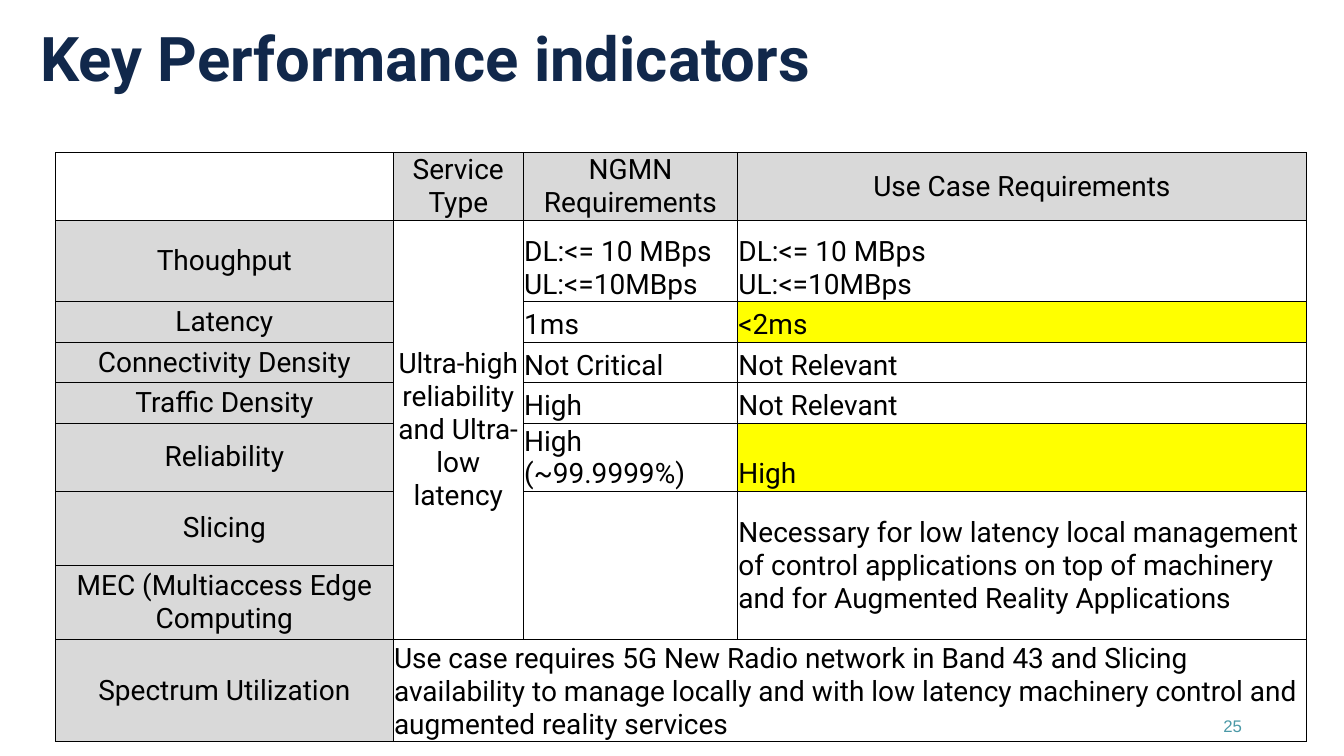
from lxml.etree import SubElement
from pptx import Presentation
from pptx.dml.color import RGBColor
from pptx.enum.text import MSO_ANCHOR, PP_ALIGN
from pptx.oxml import parse_xml
from pptx.oxml.ns import nsdecls, qn
from pptx.util import Cm, Pt

COLORS = {
    "title": "11284B",
    "number": "4B99A7",
    "text": "000000",
    "border": "000000",
    "label": "D9D9D9",
    "highlight": "FFFF00",
}
COLUMN_WIDTHS = [8.51, 3.28, 5.4, 14.33]
ROW_HEIGHTS = [1.63, 2.04] + [1.02] * 4 + [1.87] * 2 + [2.44]
HEADERS = ["Service Type", "NGMN Requirements", "Use Case Requirements"]
LABELS = [
    "Thoughput", "Latency", "Connectivity Density", "Traffic Density",
    "Reliability", "Slicing", "MEC (Multiaccess Edge Computing",
    "Spectrum Utilization",
]
SERVICE_TYPE = "Ultra-high reliability and Ultra-low latency"
THROUGHPUT = "DL:<= 10 MBps\vUL:<=10MBps"
REQUIREMENTS = [
    (THROUGHPUT, THROUGHPUT),
    ("1ms", "<2ms"),
    ("Not Critical", "Not Relevant"),
    ("High", "Not Relevant"),
    ("High (~99.9999%)", "High"),
]
HIGHLIGHTED_ROWS = {2, 5}
EDGE_NEED = (
    "Necessary for low latency local management of control applications "
    "on top of machinery and for Augmented Reality Applications"
)
SPECTRUM_NEED = (
    "Use case requires 5G New Radio network in Band 43 and Slicing "
    "availability to manage locally and with low latency machinery control "
    "and augmented reality services"
)


def write_text(frame, text, *, size=20, font="Roboto", color="text",
               bold=False, align=PP_ALIGN.LEFT, spacing=None):
    """Fill the first paragraph; a vertical tab in text is a line break."""
    para = frame.paragraphs[0]
    para.text = text
    para.alignment = align
    if spacing:
        para.line_spacing = spacing
    for span in para.runs:
        span.font.size = Pt(size)
        span.font.name = font
        span.font.bold = bold
        span.font.color.rgb = RGBColor.from_string(COLORS[color])


def add_text_box(page, left, top, width, height, text, **style):
    box = page.shapes.add_textbox(Cm(left), Cm(top), Cm(width), Cm(height))
    box.text_frame.word_wrap = True
    box.text_frame.vertical_anchor = MSO_ANCHOR.MIDDLE
    write_text(box.text_frame, text, **style)


def add_borders(cell):
    """Put a thin line on each side; lines must come before the fill."""
    properties = cell._tc.get_or_add_tcPr()
    for index, side in enumerate(("lnL", "lnR", "lnT", "lnB")):
        line = parse_xml(f'<a:{side} {nsdecls("a")} w="{Pt(0.5)}"/>')
        fill = SubElement(line, qn("a:solidFill"))
        SubElement(fill, qn("a:srgbClr"), val=COLORS["border"])
        properties.insert(index, line)


def format_cell(cell):
    cell.margin_left = cell.margin_right = cell.margin_top = Cm(0.02)
    cell.margin_bottom = 0
    cell.fill.background()
    add_borders(cell)


def fill_cell(cell, text, anchor=MSO_ANCHOR.BOTTOM, fill=None, **style):
    write_text(cell.text_frame, text, **style)
    cell.vertical_anchor = anchor
    if fill:
        cell.fill.solid()
        cell.fill.fore_color.rgb = RGBColor.from_string(COLORS[fill])


def add_indicator_table(page):
    frame = page.shapes.add_table(
        len(ROW_HEIGHTS), len(COLUMN_WIDTHS), Cm(1.4), Cm(3.84),
        Cm(sum(COLUMN_WIDTHS)), Cm(sum(ROW_HEIGHTS)))
    table = frame.table
    table.first_row = table.horz_banding = False
    for column, width in zip(table.columns, COLUMN_WIDTHS):
        column.width = Cm(width)
    for row, height in zip(table.rows, ROW_HEIGHTS):
        row.height = Cm(height)
    for cell in table.iter_cells():
        format_cell(cell)
    for first, last in [((1, 1), (7, 1)), ((6, 2), (7, 2)),
                        ((6, 3), (7, 3)), ((8, 1), (8, 3))]:
        table.cell(*first).merge(table.cell(*last))

    centred = {"anchor": MSO_ANCHOR.MIDDLE, "align": PP_ALIGN.CENTER}
    for column, header in enumerate(HEADERS, 1):
        fill_cell(table.cell(0, column), header, fill="label", **centred)
    for row, label in enumerate(LABELS, 1):
        fill_cell(table.cell(row, 0), label, fill="label", **centred)
    fill_cell(table.cell(1, 1), SERVICE_TYPE, **centred)
    for row, (general, use_case) in enumerate(REQUIREMENTS, 1):
        fill_cell(table.cell(row, 2), general)
        fill_cell(table.cell(row, 3), use_case,
                  fill="highlight" if row in HIGHLIGHTED_ROWS else None)
    fill_cell(table.cell(6, 3), EDGE_NEED, anchor=MSO_ANCHOR.MIDDLE)
    fill_cell(table.cell(8, 1), SPECTRUM_NEED)


def main():
    deck = Presentation()
    deck.slide_width, deck.slide_height = Cm(33.87), Cm(19.05)
    page = deck.slides.add_slide(deck.slide_layouts[6])
    # The number sits in the free end of the table's last text line.
    add_text_box(page, 23.93, 17.9, 7.62, 0.8, "25", size=12, font="Arial",
                 color="number", align=PP_ALIGN.RIGHT)
    add_indicator_table(page)
    add_text_box(page, 0.76, 0.28, 29.21, 2.54, "Key Performance indicators",
                 size=44, color="title", bold=True, spacing=0.9)
    deck.save("out.pptx")


if __name__ == "__main__":
    main()
